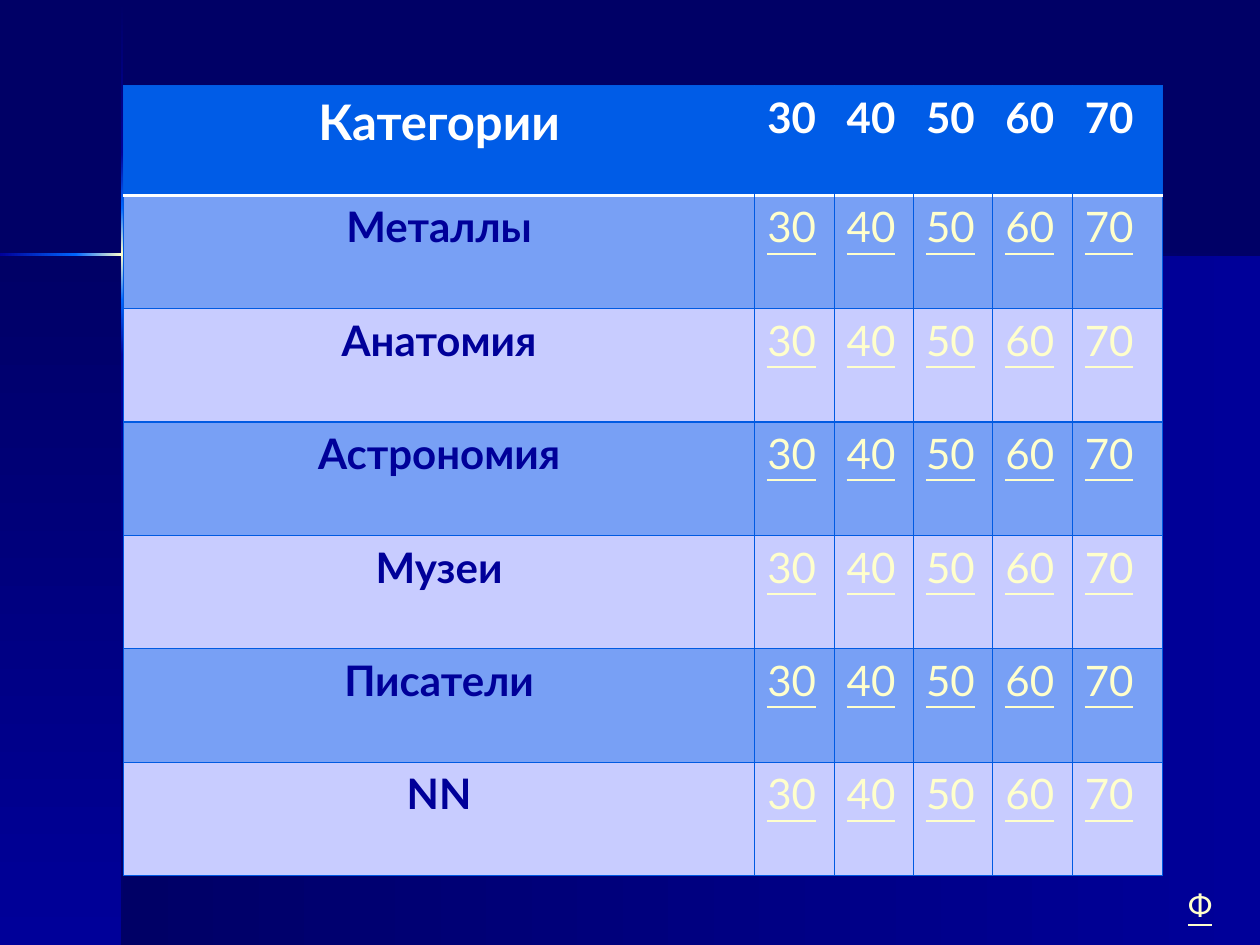
from dataclasses import dataclass
from lxml.etree import SubElement
from pptx import Presentation
from pptx.dml.color import RGBColor
from pptx.enum.shapes import MSO_SHAPE
from pptx.enum.text import MSO_AUTO_SIZE, PP_ALIGN
from pptx.oxml.ns import qn
from pptx.util import Inches, Pt


@dataclass(frozen=True)
class Theme:
    font: str = "Lato"
    night: str = "000066"
    navy: str = "000099"
    blue: str = "0066FF"
    cream: str = "FFFFCC"
    white: str = "FFFFFF"
    head: str = "005CE7"
    band: str = "78A0F5"
    pale: str = "C8CCFF"
    line: str = "005AE2"
    large: int = 28
    body: int = 24
    small: int = 18


THEME = Theme()
TOPICS = ["Металлы", "Анатомия", "Астрономия", "Музеи", "Писатели", "NN"]
POINTS = ["30", "40", "50", "60", "70"]
WIDTHS = [5.01, 0.63, 0.63, 0.63, 0.63, 0.72]
HEIGHTS = [0.87] + [0.9] * len(TOPICS)


def add_panel(slide, box, colors, angle):
    panel = slide.shapes.add_shape(MSO_SHAPE.RECTANGLE, *map(Inches, box))
    panel.shadow.inherit = False
    panel.line.fill.background()
    panel.fill.gradient()
    panel.fill.gradient_angle = angle
    stops = panel._element.spPr.find(".//" + qn("a:gsLst"))
    stops.clear()
    for index, color in enumerate(colors):
        place = str(100000 * index // (len(colors) - 1))
        stop = SubElement(stops, qn("a:gs"), pos=place)
        SubElement(stop, qn("a:srgbClr"), val=color)


def add_backdrop(slide):
    night, navy, blue, cream = THEME.night, THEME.navy, THEME.blue, THEME.cream
    glow = [blue, cream, blue]
    down, across = 270, 0
    add_panel(slide, (0.97, 2.02, 9.03, 5.48), [night, navy], across)
    add_panel(slide, (0, 2.02, 0.97, 5.48), [night, navy], down)
    for top, height, colors in [
        (0.01, 1.2, [night, navy]),
        (2.82, 4.68, [navy, night]),
        (2.38, 0.44, [blue, navy]),
        (1.21, 0.44, [navy, blue]),
        (1.65, 0.73, glow),
    ]:
        add_panel(slide, (0.96, top, 0.02, height), colors, down)
    for left, width, colors in [
        (1.77, 8.23, [navy, night]),
        (0, 0.61, [navy, blue]),
        (1.33, 0.44, [blue, navy]),
        (0.6, 0.73, glow),
    ]:
        add_panel(slide, (left, 2.01, width, 0.02), colors, across)


def style_text(frame, size, color, bold=False, under=False):
    for part in frame.paragraphs:
        for run in part.runs:
            font = run.font
            font.name = THEME.font
            font.size = Pt(size)
            font.bold = bold
            font.underline = under
            font.color.rgb = RGBColor.from_string(color)


def set_edge(cell, side, color, width):
    edge = SubElement(cell._tc.get_or_add_tcPr(), qn("a:ln" + side), w=str(Pt(width)))
    fill = SubElement(edge, qn("a:solidFill"))
    SubElement(fill, qn("a:srgbClr"), val=color)


def frame_cell(cell, row, col):
    rule = (THEME.white, 2)
    thin = (THEME.line, 0.75)
    hidden = (THEME.head, 0.75)
    last = len(POINTS)
    edges = {
        "L": hidden if row == 0 and col > 0 else thin,
        "R": hidden if row == 0 and col < last else thin,
        "T": rule if row == 1 else thin,
        "B": rule if row == 0 else thin,
    }
    for side, (color, width) in edges.items():
        set_edge(cell, side, color, width)


def fill_cell(cell, text, row, col):
    frame_cell(cell, row, col)
    shade = THEME.head if row == 0 else THEME.band if row % 2 else THEME.pale
    cell.fill.solid()
    cell.fill.fore_color.rgb = RGBColor.from_string(shade)
    frame = cell.text_frame
    frame.text = text
    if col == 0:
        frame.paragraphs[0].alignment = PP_ALIGN.CENTER
    if row == 0:
        size = THEME.body if col else THEME.large
        style_text(frame, size, THEME.white, bold=True)
    elif col == 0:
        style_text(frame, THEME.body, THEME.navy, bold=True)
    else:
        style_text(frame, THEME.body, THEME.cream, under=True)


def add_board(slide):
    rows = [[name] + POINTS for name in ["Категории"] + TOPICS]
    size = map(Inches, (0.98, 0.68, sum(WIDTHS), sum(HEIGHTS)))
    board = slide.shapes.add_table(len(rows), len(WIDTHS), *size).table
    for column, width in zip(board.columns, WIDTHS):
        column.width = Inches(width)
    for line, height in zip(board.rows, HEIGHTS):
        line.height = Inches(height)
    for row, texts in enumerate(rows):
        for col, text in enumerate(texts):
            fill_cell(board.cell(row, col), text, row, col)


def add_label(slide, text, box):
    frame = slide.shapes.add_textbox(*map(Inches, box)).text_frame
    frame.word_wrap = False
    frame.auto_size = MSO_AUTO_SIZE.SHAPE_TO_FIT_TEXT
    frame.text = text
    style_text(frame, THEME.small, THEME.cream, under=True)


def main():
    deck = Presentation()
    deck.slide_width, deck.slide_height = Inches(10), Inches(7.5)
    slide = deck.slides.add_slide(deck.slide_layouts[6])
    slide.background.fill.solid()
    slide.background.fill.fore_color.rgb = RGBColor.from_string(THEME.night)
    add_backdrop(slide)
    add_board(slide)
    add_label(slide, "Ф", (9.33, 6.98, 0.39, 0.4))
    deck.save("out.pptx")


if __name__ == "__main__":
    main()
